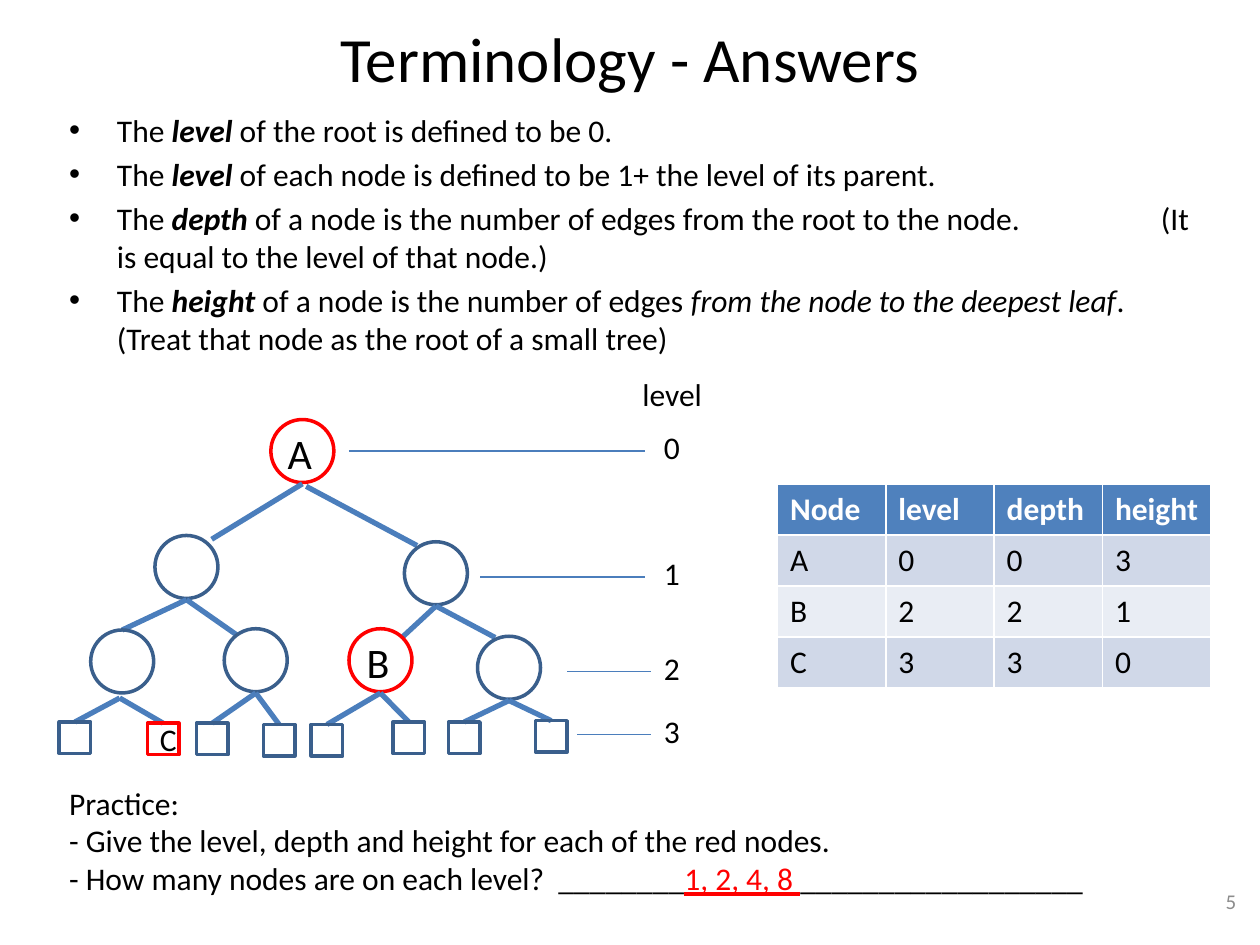
from dataclasses import dataclass

from lxml.etree import SubElement
from pptx import Presentation
from pptx.dml.color import RGBColor
from pptx.enum.shapes import MSO_CONNECTOR, MSO_SHAPE
from pptx.enum.text import MSO_ANCHOR, PP_ALIGN
from pptx.oxml.ns import qn
from pptx.util import Inches, Pt

FONT, BLACK, WHITE, RED = "Calibri", "000000", "FFFFFF", "FF0000"
GREY, RIM, EDGE, HEAD = "8C8C8C", "3A5F8C", "4B7EBC", "4F81BD"
BANDS = ("D0D8E8", "E9EDF4")
DISC, BOX = 0.5, 0.25


@dataclass
class Run:
    text: str
    color: str = BLACK
    bold: bool = False
    slant: bool = False
    under: bool = False
    track: int = 0  # letter spacing in points


@dataclass
class Node:
    """A tree node; end is where its edge lands, nudge shifts the edge's start."""
    left: float
    top: float
    end: tuple[float, float] = (BOX / 2, 0)
    nudge: tuple[float, float] = (0, 0)
    kids: tuple = ()
    tag: str = ""

    @property
    def size(self) -> float:
        return DISC if self.kids else BOX


@dataclass
class Level:
    name: str
    start: float
    stop: float
    y: float


TREE = Node(2.15, 3.33, tag="A", kids=(
    Node(1.23, 4.25, (0.45, 0.03), kids=(
        Node(0.72, 5, (0.25, 0), kids=(
            Node(0.47, 5.73, nudge=(-0.02, 0.03)),
            Node(1.17, 5.74, nudge=(-0.02, 0.03), tag="C"))),
        Node(1.78, 4.99, (0.1, 0.05), kids=(Node(1.56, 5.74), Node(2.09, 5.75))))),
    Node(3.21, 4.3, (0.1, 0.03), (0.03, 0.02), kids=(
        Node(2.77, 4.99, (0.42, 0.07), tag="B",
             kids=(Node(2.47, 5.75), Node(3.12, 5.73))),
        Node(3.79, 5.05, (0.14, 0.01), kids=(Node(3.56, 5.73), Node(4.25, 5.72)))))))

LEVELS = (Level("0", 2.77, 5.12, 3.58), Level("1", 3.81, 5.12, 4.58),
          Level("2", 4.5, 5.17, 5.33), Level("3", 4.58, 5.17, 5.83))

TERMS = (
    (Run("The "), Run("level", bold=True, slant=True),
     Run(" of the root is defined to be 0.")),
    (Run("The "), Run("level", bold=True, slant=True),
     Run(" of each node is defined to be 1+ the level of its parent.")),
    (Run("The "), Run("depth ", bold=True, slant=True),
     Run("of a node is the number of edges from the root to the node."),
     Run(" ", track=76), Run("(It is equal to the level of that node.)")),
    (Run("The "), Run("height", bold=True, slant=True),
     Run(" of a node is the number of edges "),
     Run("from the node to the deepest leaf", slant=True),
     Run(". (Treat that node as the root of a small tree)")),
)

TASKS = (
    (Run("Practice:"),),
    (Run("- Give the level, depth and height for each of the red nodes."),),
    (Run("- How many nodes are on each level?  " + "_" * 8),
     Run("1, 2, 4, 8 ", RED, under=True), Run("_" * 18)),
)

ROWS = (("Node", "level", "depth", "height"),
        ("A", "0", "0", "3"), ("B", "2", "2", "1"), ("C", "3", "3", "0"))


def paint(target, color: str) -> None:
    """Give a fill a solid colour."""
    target.solid()
    target.fore_color.rgb = RGBColor.from_string(color)


def write(frame, lines, size: float = 18, align=PP_ALIGN.LEFT) -> None:
    for at, runs in enumerate(lines):
        para = frame.add_paragraph() if at else frame.paragraphs[0]
        para.alignment = align
        for item in runs:
            run = para.add_run()
            run.text = item.text
            font = run.font
            font.name, font.size = FONT, Pt(size)
            font.bold, font.italic = item.bold, item.slant
            font.underline = item.under
            paint(font.fill, item.color)
            if item.track:
                run._r.get_or_add_rPr().set("spc", str(item.track * 100))


def add_text(slide, spot, lines, size: float = 18, align=PP_ALIGN.LEFT,
             wrap: bool = True, anchor=MSO_ANCHOR.TOP):
    frame = slide.shapes.add_textbox(*map(Inches, spot)).text_frame
    frame.word_wrap, frame.vertical_anchor = wrap, anchor
    write(frame, lines, size, align)
    return frame


def add_line(slide, start, end, width: float) -> None:
    line = slide.shapes.add_connector(
        MSO_CONNECTOR.STRAIGHT, *map(Inches, (*start, *end)))
    paint(line.line.fill, EDGE)
    line.line.width = Pt(width)
    SubElement(line._element.spPr, qn("a:effectLst"))


def add_node(slide, node: Node) -> None:
    """Draw a node, then the edges and nodes below it."""
    kind = MSO_SHAPE.OVAL if node.kids else MSO_SHAPE.RECTANGLE
    spot = (node.left, node.top, node.size, node.size)
    shape = slide.shapes.add_shape(kind, *map(Inches, spot))
    shape.shadow.inherit = False
    shape.fill.background()
    paint(shape.line.fill, RED if node.tag else RIM)
    shape.line.width = Pt(2)
    if node.tag and node.kids:
        add_text(slide, (node.left, node.top + 0.01, 0.46, 0.5),
                 [[Run(node.tag)]], 24, PP_ALIGN.CENTER)
    elif node.tag:
        shape.text_frame.vertical_anchor = MSO_ANCHOR.MIDDLE
        write(shape.text_frame, [[Run(node.tag)]], align=PP_ALIGN.CENTER)
    for kid in node.kids:
        start = (node.left + node.size / 2 + kid.nudge[0],
                 node.top + node.size + 0.01 + kid.nudge[1])
        add_line(slide, start, (kid.left + kid.end[0], kid.top + kid.end[1]), 3)
        add_node(slide, kid)


def add_terms(slide) -> None:
    frame = add_text(slide, (0.45, 0.83, 9.11, 2.02), TERMS)
    for para in frame.paragraphs:
        para.space_before = Pt(3.6)
        props = para._p.get_or_add_pPr()
        props.set("marL", str(Inches(0.38)))
        props.set("indent", str(Inches(-0.38)))
        SubElement(props, qn("a:buFont")).set("typeface", "Arial")
        SubElement(props, qn("a:buChar")).set("char", "•")


def add_grid(slide) -> None:
    spot = (6.17, 3.84, 3.44, 1.62)
    grid = slide.shapes.add_table(len(ROWS), len(ROWS[0]), *map(Inches, spot)).table
    for y, row in enumerate(ROWS):
        for x, text in enumerate(row):
            cell = grid.cell(y, x)
            paint(cell.fill, BANDS[(y - 1) % 2] if y else HEAD)
            write(cell.text_frame, [[Run(text, BLACK if y else WHITE, bold=not y)]])


def main() -> None:
    deck = Presentation()
    deck.slide_width, deck.slide_height = Inches(10), Inches(7.5)
    slide = deck.slides.add_slide(deck.slide_layouts[6])
    add_text(slide, (0.5, 0.08, 9, 0.75), [[Run("Terminology - Answers")]], 36,
             PP_ALIGN.CENTER, anchor=MSO_ANCHOR.MIDDLE)
    add_text(slide, (7.58, 6.95, 2.33, 0.4), [[Run("5", GREY)]], 12,
             PP_ALIGN.RIGHT, anchor=MSO_ANCHOR.MIDDLE)
    add_terms(slide)
    add_node(slide, TREE)
    add_text(slide, (5, 2.93, 0.68, 0.4), [[Run("level")]], wrap=False)
    for level in LEVELS:
        add_line(slide, (level.start, level.y), (level.stop, level.y), 0.75)
        add_text(slide, (5.17, level.y - 0.23, 0.33, 0.4),
                 [[Run(level.name)]], wrap=False)
    add_grid(slide)
    add_text(slide, (0.45, 6.17, 8.49, 1.01), TASKS, wrap=False)
    deck.save("out.pptx")


if __name__ == "__main__":
    main()
